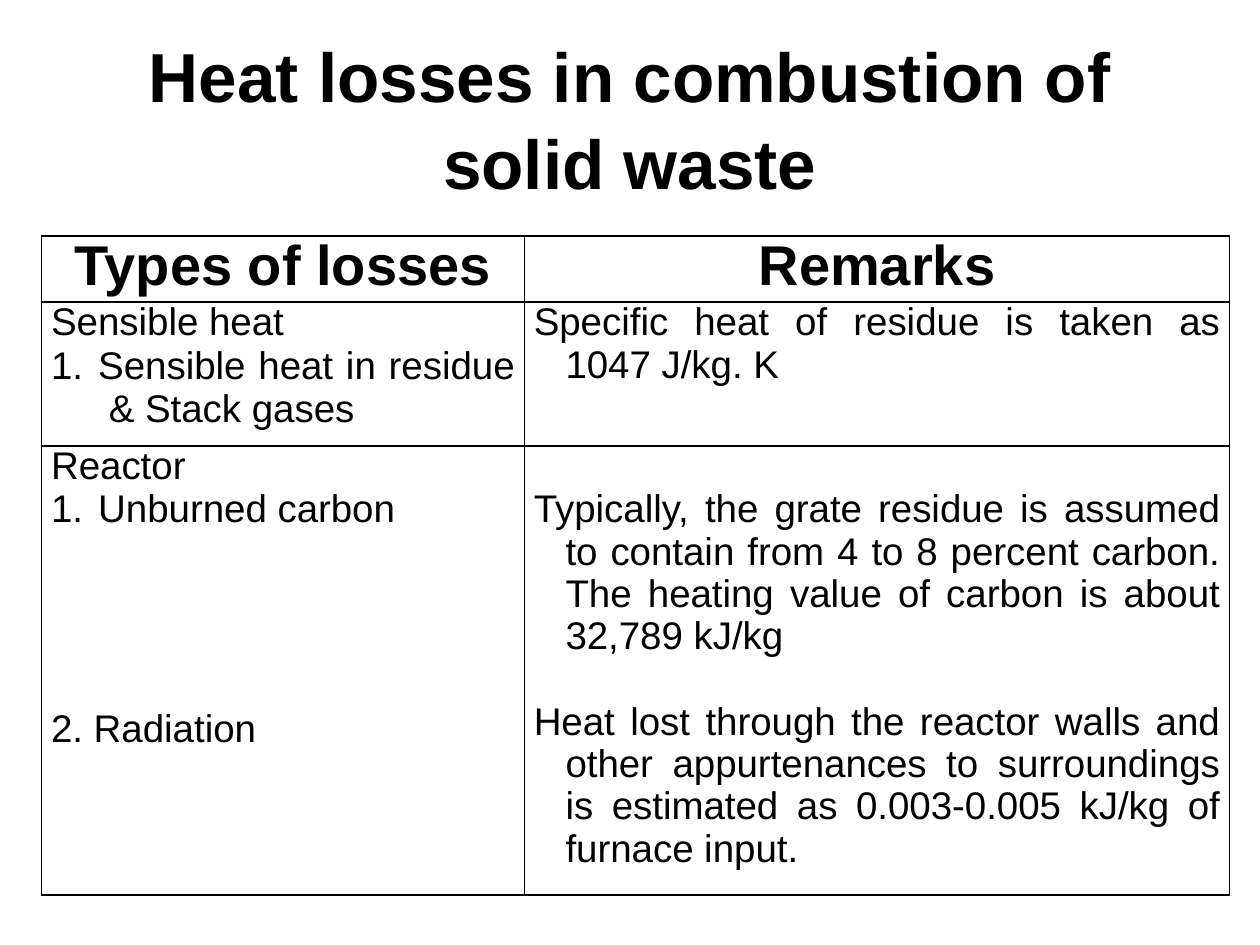
from dataclasses import dataclass

from lxml.etree import SubElement
from pptx import Presentation
from pptx.dml.color import RGBColor
from pptx.enum.text import MSO_ANCHOR, PP_ALIGN as Align
from pptx.oxml.ns import qn
from pptx.util import Cm, Pt

FONT = "Arial"
BLACK = "000000"
WHITE = "FFFFFF"
COLUMN_WIDTHS = (9.73, 14.22)
ROW_HEIGHTS = (1.02, 2.9, 8.13)


@dataclass
class Line:
    text: str
    size: float = 22
    bold: bool = False
    align: Align = Align.JUSTIFY
    hanging: float = 0.64
    numbered: bool = False
    space_before: float = 0
    spacing: float = 0.98


@dataclass
class CellContent:
    lines: list[Line]
    top_margin: float = 0


def heading(text: str) -> CellContent:
    return CellContent([Line(text, 32, True, Align.CENTER)])


def item(text: str, numbered: bool = True, space_before: float = 0) -> Line:
    return Line(text, hanging=0.95, numbered=numbered, space_before=space_before, spacing=1)


ROWS = [
    [heading("Types of losses"), heading("Remarks")],
    [
        CellContent([Line("Sensible heat"), item("Sensible heat in residue  & Stack gases")]),
        CellContent([Line("Specific heat of residue is taken as 1047 J/kg. K")]),
    ],
    [
        CellContent([
            Line("Reactor"),
            item("Unburned carbon"),
            item("2. Radiation", numbered=False, space_before=101),
        ]),
        CellContent([
            Line("Typically, the grate residue is assumed to contain from 4 to 8 percent "
                 "carbon. The heating value of carbon is about 32,789 kJ/kg"),
            Line("Heat lost through the reactor walls and other appurtenances to surroundings "
                 "is estimated as 0.003-0.005 kJ/kg of furnace input.", space_before=25),
        ], top_margin=0.87),
    ],
]


def color(value: str) -> RGBColor:
    return RGBColor.from_string(value)


def write_lines(text_frame, lines: list[Line]) -> None:
    text_frame.text = "\n".join(line.text for line in lines)
    for paragraph, line in zip(text_frame.paragraphs, lines):
        paragraph.alignment = line.align
        paragraph.line_spacing = line.spacing
        paragraph.space_before = Pt(line.space_before)
        properties = paragraph._p.get_or_add_pPr()
        properties.set("marL", str(Cm(line.hanging)))
        properties.set("indent", str(-Cm(line.hanging)))
        if line.numbered:
            SubElement(properties, qn("a:buFont"), typeface=FONT)
            SubElement(properties, qn("a:buAutoNum"), type="arabicPeriod")
        for run in paragraph.runs:
            run.font.name = FONT
            run.font.size = Pt(line.size)
            run.font.bold = line.bold
            run.font.color.rgb = color(BLACK)


def add_borders(cell) -> None:
    properties = cell._tc.get_or_add_tcPr()
    for side in ("lnL", "lnR", "lnT", "lnB"):
        border = SubElement(properties, qn(f"a:{side}"), w=str(Pt(1)))
        fill = SubElement(border, qn("a:solidFill"))
        SubElement(fill, qn("a:srgbClr"), val=BLACK)


def add_title(slide) -> None:
    shape = slide.shapes.add_textbox(Cm(1.27), Cm(0.76), Cm(22.86), Cm(3.18))
    text_frame = shape.text_frame
    text_frame.word_wrap = True
    text_frame.vertical_anchor = MSO_ANCHOR.MIDDLE
    write_lines(text_frame, [
        Line("Heat losses in combustion of solid waste", 39.6, True, Align.CENTER,
             hanging=0, spacing=1.04)
    ])


def add_losses_table(slide) -> None:
    frame = slide.shapes.add_table(
        len(ROWS), len(COLUMN_WIDTHS), Cm(0.84), Cm(4.76),
        Cm(sum(COLUMN_WIDTHS)), Cm(sum(ROW_HEIGHTS)))
    table = frame.table
    table.first_row = False
    table.horz_banding = False
    for column, width in zip(table.columns, COLUMN_WIDTHS):
        column.width = Cm(width)
    for row, height, contents in zip(table.rows, ROW_HEIGHTS, ROWS):
        row.height = Cm(height)
        for cell, content in zip(row.cells, contents):
            cell.margin_left = cell.margin_right = Cm(0.19)
            cell.margin_top = Cm(content.top_margin)
            cell.margin_bottom = Cm(0)
            add_borders(cell)
            cell.fill.background()
            write_lines(cell.text_frame, content.lines)


def main() -> None:
    presentation = Presentation()
    presentation.slide_width = Cm(25.4)
    presentation.slide_height = Cm(19.05)
    slide = presentation.slides.add_slide(presentation.slide_layouts[6])
    slide.background.fill.solid()
    slide.background.fill.fore_color.rgb = color(WHITE)
    add_title(slide)
    add_losses_table(slide)
    presentation.save("out.pptx")


if __name__ == "__main__":
    main()
